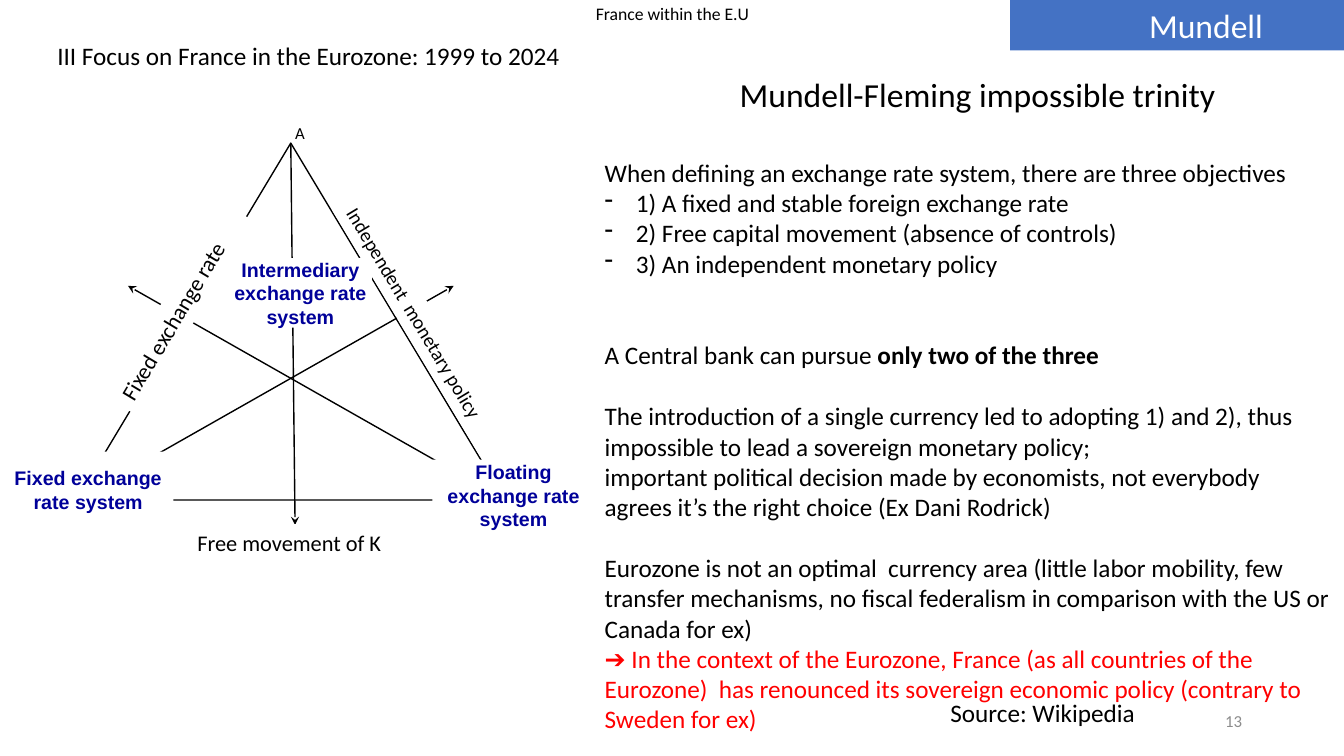
import pptx
import pptx.util
import pptx.dml.color
import pptx.enum.shapes
import pptx.enum.text
import pptx.oxml.ns
import lxml.etree

HUES = {"ink": "000000", "paper": "FFFFFF", "band": "4472C4",
        "navy": "000099", "red": "FF0000", "grey": "8C8C8C"}
CELL = 0.1
COLS, ROWS = 133.33, 75
ALIGN = pptx.enum.text.PP_ALIGN
ANCHOR = pptx.enum.text.MSO_ANCHOR
KIND = pptx.enum.shapes.MSO_SHAPE


def size(cells):
    """Turn grid cells into a length."""
    return pptx.util.Inches(cells * CELL)


def hue(name):
    """Return the named colour."""
    return pptx.dml.color.RGBColor.from_string(HUES[name])


def shift(box, col, row, wide, high):
    """Return a box placed relative to another box."""
    return box[0] + col, box[1] + row, wide, high


def child(node, tag, **attrs):
    """Append a drawing element to a node."""
    return lxml.etree.SubElement(node, pptx.oxml.ns.qn(tag), attrs)


def shape(slide, kind, box, fill="paper", line=None):
    """Add a flat preset shape."""
    item = slide.shapes.add_shape(kind, *map(size, box))
    item.shadow.inherit = False
    item.fill.solid()
    item.fill.fore_color.rgb = hue(fill)
    if line:
        item.line.color.rgb = hue(line)
        item.line.width = pptx.util.Pt(1)
    else:
        item.line.fill.background()
    return item


def dash(para):
    """Give a paragraph a hanging dash."""
    props = para._p.get_or_add_pPr()
    indent = size(3.1)
    props.set("marL", str(indent))
    props.set("indent", str(-indent))
    child(props, "a:buChar", char="-")


def text(slide, words, box, pt=18, color="ink", font="Calibri", bold=False,
         align=ALIGN.LEFT, anchor=ANCHOR.TOP, wrap=True, fill=None, turn=0,
         inset=None, lead=None):
    """Add text; each paragraph is a string or a (runs, options) pair."""
    if fill:
        item = shape(slide, KIND.RECTANGLE, box, fill)
    else:
        item = slide.shapes.add_textbox(*map(size, box))
    item.rotation = turn
    frame = item.text_frame
    frame.word_wrap = wrap
    frame.vertical_anchor = anchor
    if inset is not None:
        frame.margin_left, frame.margin_top, frame.margin_right, frame.margin_bottom = map(size, inset)
    for num, part in enumerate([words] if isinstance(words, str) else words):
        runs, opts = (part, {}) if isinstance(part, str) else part
        para = frame.add_paragraph() if num else frame.paragraphs[0]
        para.alignment = align
        if lead:
            para.line_spacing = lead
        if "gap" in opts:
            para.space_before = pptx.util.Pt(opts["gap"])
        if opts.get("dash"):
            dash(para)
        for spot, piece in enumerate([runs] if isinstance(runs, str) else runs):
            run = para.add_run()
            run.text = piece
            run.font.name = font
            run.font.size = pptx.util.Pt(pt)
            run.font.bold = bold or spot == 1
            run.font.color.rgb = hue(opts.get("color", color))
    return item


def arrow(slide, box, start, end):
    """Draw an arrow between two points given as shares of the box."""
    left, top, wide, high = box
    ends = [size(edge + share * span) for point in (start, end)
            for edge, share, span in zip((left, top), point, (wide, high))]
    item = slide.shapes.add_connector(pptx.enum.shapes.MSO_CONNECTOR.STRAIGHT, *ends)
    item.line.color.rgb = hue("ink")
    item.line.width = pptx.util.Pt(1)
    child(item.line._get_or_add_ln(), "a:tailEnd", type="stealth")
    child(item._element.spPr, "a:effectLst")


def header(slide, box):
    """Place the running title, section, heading and corner tag."""
    text(slide, "France within the E.U", shift(box, 16.7, 0, 100, 2.9), pt=12.6,
         align=ALIGN.CENTER, anchor=ANCHOR.BOTTOM, lead=0.9)
    text(slide, "III Focus on France in the Eurozone: 1999 to 2024",
         shift(box, 4.7, 3.5, 54.7, 7.1))
    text(slide, "Mundell-Fleming impossible trinity", shift(box, 72.4, 6.8, 49.7, 5),
         pt=24, wrap=False)
    text(slide, "Mundell", shift(box, 100.2, 0, box[2] - 100.2, 5), pt=24,
         color="paper", fill="band", inset=(13.8, 0.5, 1, 0.5))


def trinity(slide, box):
    """Draw the impossible trinity triangle with its arrows and labels."""
    peak = shape(slide, KIND.ISOSCELES_TRIANGLE, box, line="ink")
    peak.adjustments[0] = 0.5
    for start, end in (((0, 1), (0.88, 0.4)), ((1, 1), (0.12, 0.4)),
                       ((0.5, 0), (0.51, 1.07))):
        arrow(slide, box, start, end)
    text(slide, "A", shift(box, 20.7, -2.5, 2.5, 3), pt=12)
    sides = (("Fixed exchange rate", (-1, 14.6, 22.5, 3.7), 16, 301),
             ("Independent  monetary policy", (19.9, 16.3, 28.5, 3.4), 14, 59),
             ("Free movement of K", (11, 37.8, 23.8, 3.7), 16, 0))
    for words, spot, pt, turn in sides:
        text(slide, words, shift(box, *spot), pt=pt, fill="paper", turn=turn)
    nodes = (("Fixed", (-7.3, 30.6, 16.9, 7.5), None),
             ("Floating", (35.3, 31.4, 16.1, 7.1), None),
             ("Intermediary", (15.1, 11.4, 14.2, 6.9), (0, 0, 0, 0)))
    for name, spot, inset in nodes:
        text(slide, f"{name} exchange rate system", shift(box, *spot), pt=14,
             color="navy", font="Arial", bold=True, align=ALIGN.CENTER,
             anchor=ANCHOR.MIDDLE, fill="paper", inset=inset)


def body(slide, box):
    """Write the argument in one text column."""
    goals = ("1) A fixed and stable foreign exchange rate",
             "2) Free capital movement (absence of controls)",
             "3) An independent monetary policy")
    text(slide, [
        "When defining an exchange rate system, there are three objectives",
        *((goal, {"dash": True}) for goal in goals),
        (("A Central bank can pursue ", "only two of the three"), {"gap": 44}),
        ("The introduction of a single currency led to adopting 1) and 2), thus "
         "impossible to lead a sovereign monetary policy;", {"gap": 22}),
        "important political decision made by economists, not everybody "
        "agrees it’s the right choice (Ex Dani Rodrick)",
        ("Eurozone is not an optimal  currency area (little labor mobility, few "
         "transfer mechanisms, no fiscal federalism in comparison with the US or "
         "Canada for ex)", {"gap": 22}),
        ("➔ In the context of the Eurozone, France (as all countries of the "
         "Eurozone)  has renounced its sovereign economic policy (contrary to "
         "Sweden for ex)", {"color": "red"}),
    ], box)


def footer(slide, box):
    """Place the source and the page number."""
    text(slide, "Source: Wikipedia", shift(box, 0, 0, 20.5, 4), wrap=False)
    text(slide, "13", shift(box, 0.9, 0.8, 30, 4), pt=12, color="grey",
         align=ALIGN.RIGHT, anchor=ANCHOR.MIDDLE)


def main():
    """Build and save the slide."""
    deck = pptx.Presentation()
    deck.slide_width, deck.slide_height = size(COLS), size(ROWS)
    slide = deck.slides.add_slide(deck.slide_layouts[6])
    header(slide, (0, 0, COLS, 12))
    body(slide, (59, 15.1, 73.9, 59.9))
    trinity(slide, (7.6, 14.2, 42.5, 35.4))
    footer(slide, (93.3, 68.7, 31, 5))
    deck.save("out.pptx")


if __name__ == "__main__":
    main()
